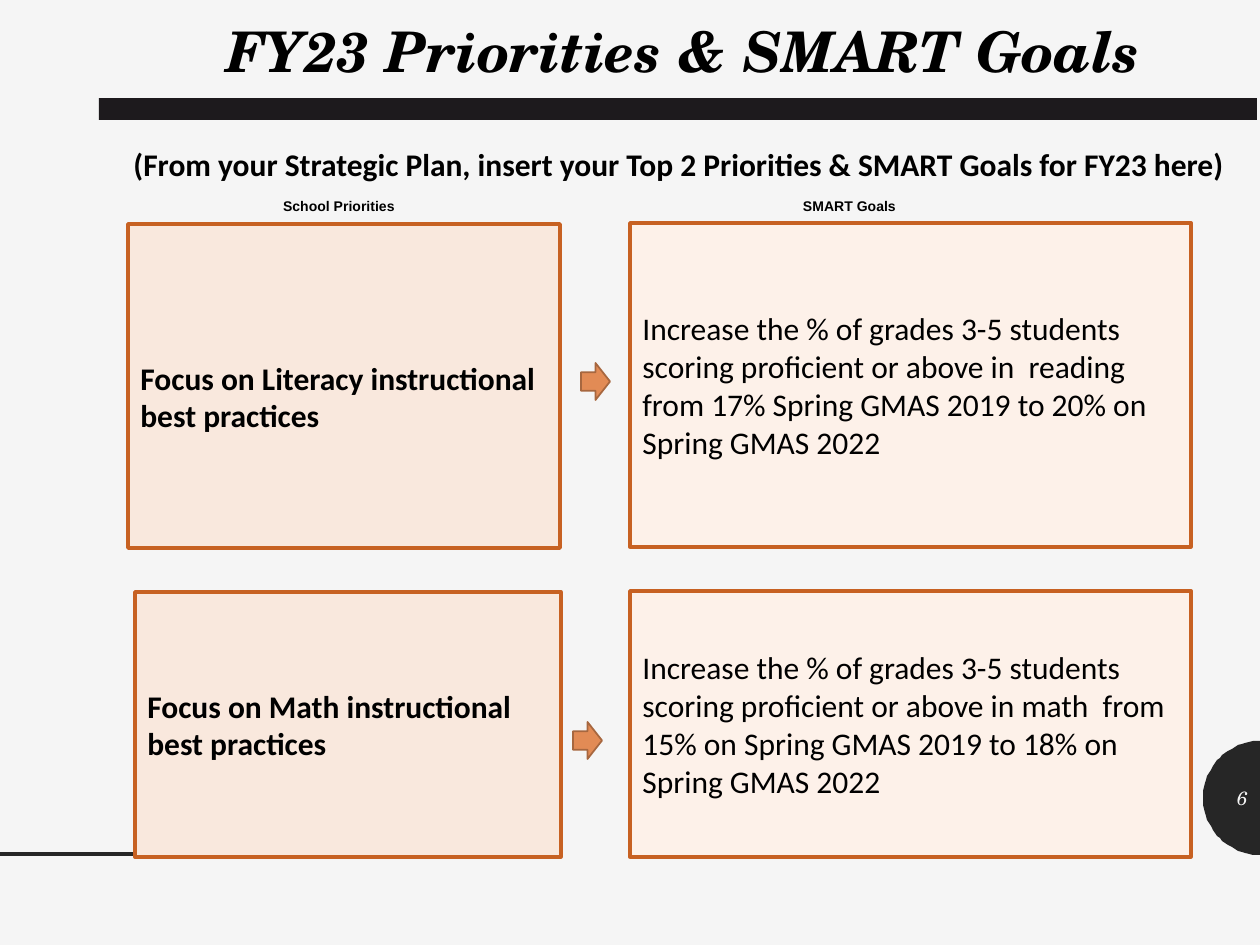
from math import cos, pi, sin

from lxml.etree import SubElement
from pptx import Presentation
from pptx.dml.color import RGBColor
from pptx.enum.shapes import MSO_CONNECTOR, MSO_SHAPE
from pptx.enum.text import MSO_ANCHOR as Anchor, PP_ALIGN as Align
from pptx.oxml.ns import qn
from pptx.util import Pt

PX = 914400 / 126
SERIF = "TeX Gyre Schola"
DARK = "262626"
PALE = "F5F5F5"

prs = Presentation()
prs.slide_width = round(1260 * PX)
prs.slide_height = round(945 * PX)
slide = prs.slides.add_slide(prs.slide_layouts[6])
shapes = slide.shapes


def paint(item, fill, line=None, width=2):
    """Fill a shape and outline it, without a shadow."""
    item.shadow.inherit = False
    item.fill.solid()
    item.fill.fore_color.rgb = RGBColor.from_string(fill)
    if line:
        item.line.color.rgb = RGBColor.from_string(line)
        item.line.width = Pt(width)
    else:
        item.line.fill.background()


def write(text, box=None, item=None, size=18, font="Calibri", color="000000",
          bold=False, italic=False, align=Align.CENTER, anchor=Anchor.TOP,
          wrap=True, top=6):
    """Put text in a given shape, or in a new text box at box."""
    if item is None:
        item = shapes.add_textbox(*[round(n * PX) for n in box])
    frame = item.text_frame
    frame.word_wrap = wrap
    frame.vertical_anchor = anchor
    frame.margin_top = round(top * PX)
    para = frame.paragraphs[0]
    para.alignment = align
    run = para.add_run()
    run.text = text
    run.font.size = Pt(size)
    run.font.name = font
    run.font.bold = bold
    run.font.italic = italic
    run.font.color.rgb = RGBColor.from_string(color)


# Background, half disc at the right edge, and rule at the left
back = slide.background.fill
back.solid()
back.fore_color.rgb = RGBColor.from_string(PALE)

steps = 48
arc = [(1260 - 57 * sin(pi * i / steps), 798 - 57 * cos(pi * i / steps))
       for i in range(steps + 1)]
disc = shapes.build_freeform(*arc[0], scale=PX)
disc.add_line_segments(arc[1:], close=True)
paint(disc.convert_to_shape(), DARK)

rule = shapes.add_connector(MSO_CONNECTOR.STRAIGHT, 0, round(854 * PX),
                            round(465 * PX), round(854 * PX))
rule.line.color.rgb = RGBColor.from_string(DARK)
rule.line.width = Pt(2)
SubElement(rule._element.spPr, qn("a:effectLst"))

# Headings
bar = shapes.add_shape(MSO_SHAPE.RECTANGLE,
                       *[round(n * PX) for n in (99, 98, 1158, 22)])
paint(bar, "1D1A1D")
write("FY23 Priorities & SMART Goals", (121, 10, 1125, 81), size=32,
      font=SERIF, bold=True, italic=True)
write("(From your Strategic Plan, insert your Top 2 Priorities & SMART Goals "
      "for FY23 here)", (98, 139, 1162, 89), bold=True)
write("School Priorities", (270, 192, 138, 30), size=8, font="Arial",
      bold=True, wrap=False)
write("SMART Goals", (768, 192, 163, 30), size=8, font="Arial", bold=True)

# Priorities on the left, goals on the right: text, box, fill, bold, top inset
cards = [
    ("Increase the % of grades 3-5 students scoring proficient or above in  "
     "reading from 17% Spring GMAS 2019 to 20% on Spring GMAS 2022",
     (630, 223, 561, 324), "FDF1E9", False, 6),
    ("Focus on Literacy instructional best practices",
     (128, 224, 432, 324), "F9E8DD", True, 27),
    ("Increase the % of grades 3-5 students scoring proficient or above in "
     "math  from 15% on Spring GMAS 2019 to 18% on Spring GMAS 2022",
     (630, 591, 561, 266), "FDF1E9", False, 6),
    ("Focus on Math instructional best practices",
     (135, 592, 426, 265), "F9E8DD", True, 6),
]
for text, box, fill, bold, top in cards:
    card = shapes.add_shape(MSO_SHAPE.RECTANGLE, *[round(n * PX) for n in box])
    paint(card, fill, "C76122")
    write(text, item=card, bold=bold, align=Align.LEFT, anchor=Anchor.MIDDLE,
          top=top)

for x, y in ((581, 363), (573, 722)):
    arrow = shapes.add_shape(MSO_SHAPE.RIGHT_ARROW,
                             *[round(n * PX) for n in (x, y, 29, 37)])
    paint(arrow, "E28B55", "A7673F", 1)

write("6", (1203, 773, 57, 50), size=11, font=SERIF, color=PALE, italic=True,
      align=Align.RIGHT, anchor=Anchor.MIDDLE)

prs.save("out.pptx")
